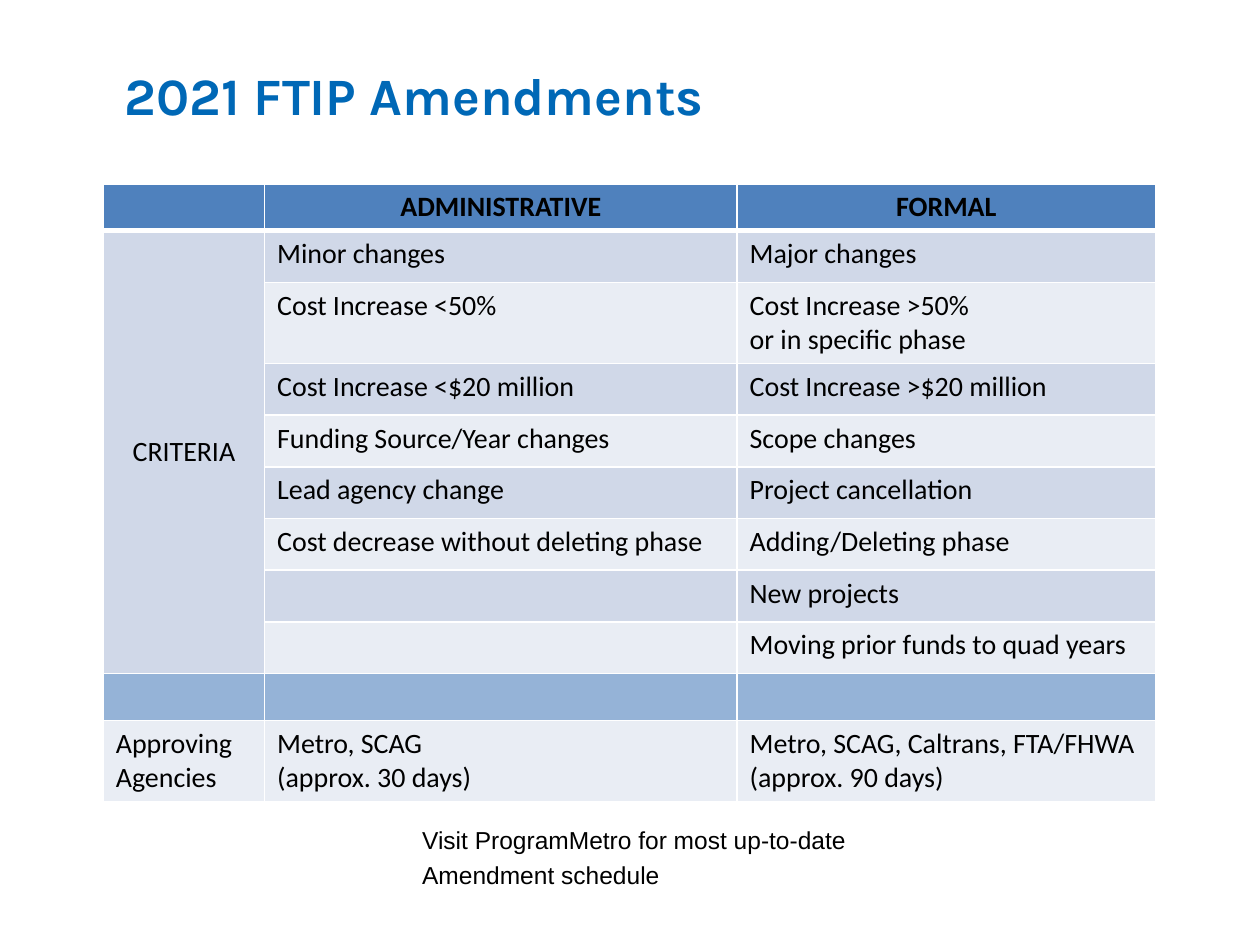
from lxml import etree
from pptx import Presentation
from pptx.dml.color import RGBColor
from pptx.enum.text import MSO_ANCHOR, MSO_AUTO_SIZE, PP_ALIGN
from pptx.oxml.ns import qn
from pptx.util import Inches, Pt

LEFT, CENTER = PP_ALIGN.LEFT, PP_ALIGN.CENTER
TOP, MIDDLE = MSO_ANCHOR.TOP, MSO_ANCHOR.MIDDLE
NO_AUTOFIT = MSO_AUTO_SIZE.NONE

BLACK = RGBColor(0x00, 0x00, 0x00)
TITLE_BLUE = RGBColor(0x00, 0x68, 0xB6)
HEADER_BLUE = RGBColor(0x4F, 0x81, 0xBD)
DIVIDER_BLUE = RGBColor(0x95, 0xB3, 0xD7)
DARK_BAND = RGBColor(0xD0, 0xD8, 0xE8)
LIGHT_BAND = RGBColor(0xE9, 0xED, 0xF4)
BORDER_COLOR = "FFFFFF"

COLUMN_WIDTHS = [1.28, 3.75, 3.32]
SINGLE_ROW, DOUBLE_ROW, COMPACT_ROW = 0.41, 0.64, 0.37
HEADER = ("", "ADMINISTRATIVE", "FORMAL")
CRITERIA = [
    ("Minor changes", "Major changes"),
    ("Cost Increase <50%", "Cost Increase >50%\nor in specific phase"),
    ("Cost Increase <$20 million", "Cost Increase >$20 million"),
    ("Funding Source/Year changes", "Scope changes"),
    ("Lead agency change", "Project cancellation"),
    ("Cost decrease without deleting phase", "Adding/Deleting phase"),
    ("", "New projects"),
    ("", "Moving prior funds to quad years"),
]
APPROVERS = (
    "Approving Agencies",
    "Metro, SCAG\n(approx. 30 days)",
    "Metro, SCAG, Caltrans, FTA/FHWA\n(approx. 90 days)",
)


def add_run(paragraph, text, font_name, size, color, bold=False):
    run = paragraph.add_run()
    run.text = text
    run.font.name = font_name
    run.font.size = Pt(size)
    run.font.color.rgb = color
    run.font.bold = bold


def place(shape, box):
    shape.left, shape.top, shape.width, shape.height = map(Inches, box)
    shape.text_frame.word_wrap = True
    shape.text_frame.auto_size = NO_AUTOFIT


def add_title(slide, box):
    title = slide.shapes.title
    place(title, box)
    title.text_frame.vertical_anchor = MIDDLE
    paragraph = title.text_frame.paragraphs[0]
    paragraph.alignment = LEFT
    add_run(paragraph, "2021 FTIP Amendments", "Karla", 30, TITLE_BLUE, True)


def set_borders(cell, top_width, bottom_width):
    properties = cell._tc.get_or_add_tcPr()
    widths = {"lnL": 1, "lnR": 1, "lnT": top_width, "lnB": bottom_width}
    for side, width in widths.items():
        line = etree.SubElement(properties, qn("a:" + side), w=str(Pt(width)))
        fill = etree.SubElement(line, qn("a:solidFill"))
        etree.SubElement(fill, qn("a:srgbClr"), val=BORDER_COLOR)


def fill_cell(cell, text, color, alignment=LEFT, bold=False):
    cell.fill.solid()
    cell.fill.fore_color.rgb = color
    for index, line in enumerate(text.split("\n")):
        frame = cell.text_frame
        paragraph = frame.add_paragraph() if index else frame.paragraphs[0]
        paragraph.alignment = alignment
        if line:
            add_run(paragraph, line, "Calibri", 16, BLACK, bold)
        else:
            etree.SubElement(paragraph._p, qn("a:endParaRPr"), sz="1600")


def add_amendment_table(slide, box):
    criteria_rows = [("CRITERIA" if index == 0 else "",) + pair
                     for index, pair in enumerate(CRITERIA)]
    rows = [HEADER] + criteria_rows + [("", "", ""), APPROVERS]
    divider = len(rows) - 2
    table = slide.shapes.add_table(
        len(rows), len(COLUMN_WIDTHS), *map(Inches, box)).table
    for column, width in zip(table.columns, COLUMN_WIDTHS):
        column.width = Inches(width)

    for row_index, values in enumerate(rows):
        is_header = row_index == 0
        if is_header:
            color, height = HEADER_BLUE, COMPACT_ROW
        elif row_index == divider:
            color, height = DIVIDER_BLUE, COMPACT_ROW
        else:
            color = DARK_BAND if row_index % 2 else LIGHT_BAND
            height = DOUBLE_ROW if "\n" in values[-1] else SINGLE_ROW
        table.rows[row_index].height = Inches(height)
        for column_index, text in enumerate(values):
            cell = table.cell(row_index, column_index)
            set_borders(cell, 3 if row_index == 1 else 1, 3 if is_header else 1)
            centered = is_header or text == "CRITERIA"
            fill_cell(cell, text, color, CENTER if centered else LEFT, is_header)
            cell.vertical_anchor = TOP

    criteria_cell = table.cell(1, 0)
    criteria_cell.merge(table.cell(len(CRITERIA), 0))
    criteria_cell.vertical_anchor = MIDDLE


def add_schedule_note(slide, box):
    note = slide.placeholders[1]
    place(note, box)
    paragraph = note.text_frame.paragraphs[0]
    properties = paragraph._p.get_or_add_pPr()
    properties.set("marL", "0")
    properties.set("indent", "0")
    etree.SubElement(properties, qn("a:buNone"))
    paragraph.alignment = LEFT
    paragraph.line_spacing = Pt(20)
    paragraph.space_before = Pt(0)
    add_run(paragraph, "Visit ProgramMetro for most up-to-date Amendment schedule",
            "Arial", 14, BLACK)


def main():
    presentation = Presentation()
    presentation.slide_width = Inches(10)
    presentation.slide_height = Inches(7.5)
    slide = presentation.slides.add_slide(presentation.slide_layouts[1])
    add_title(slide, (0.89, 0.3, 8.67, 0.9))
    add_amendment_table(slide, (0.82, 1.46, 8.35, 4.84))
    add_schedule_note(slide, (3.25, 6.45, 4.03, 0.67))
    presentation.save("out.pptx")


if __name__ == "__main__":
    main()
